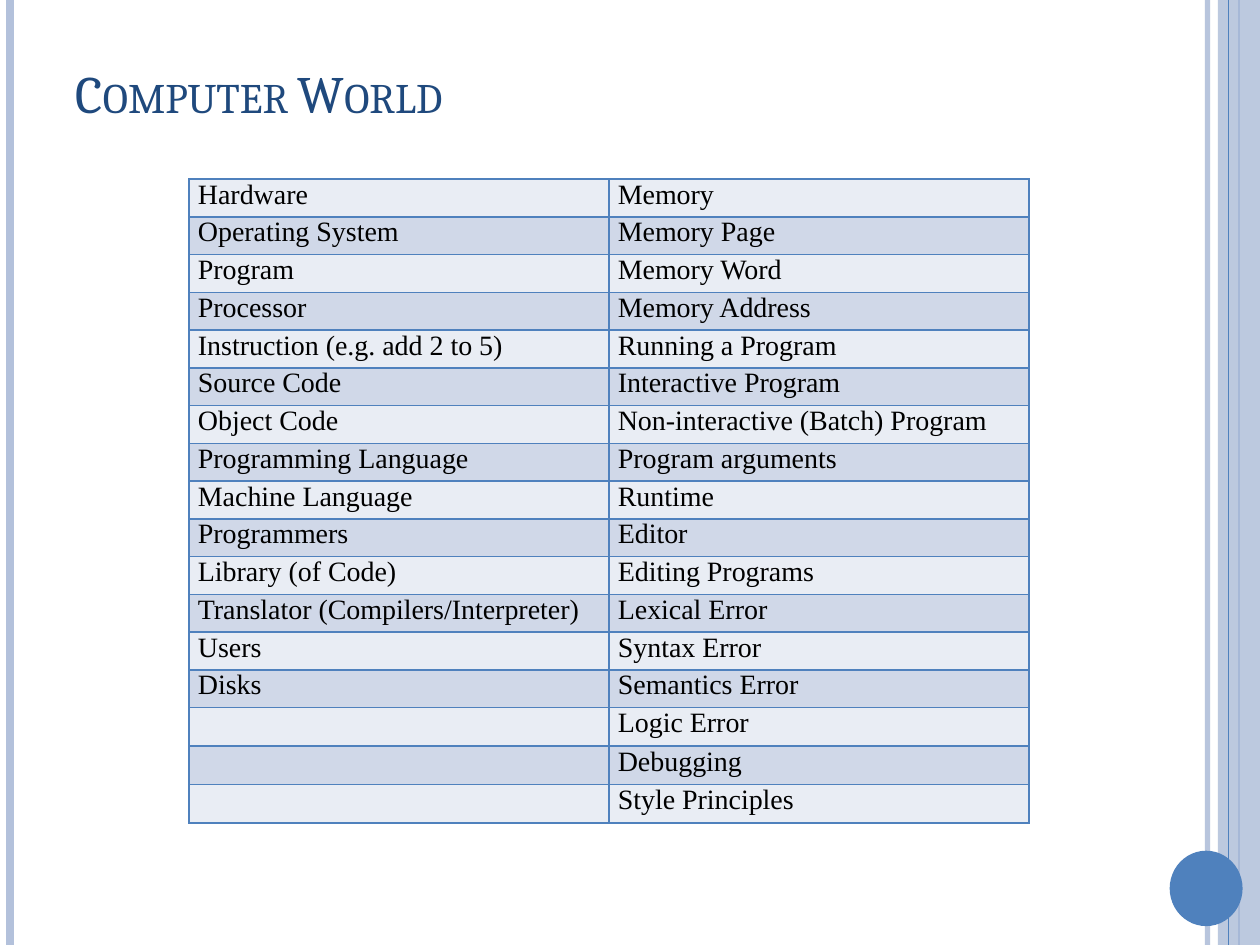
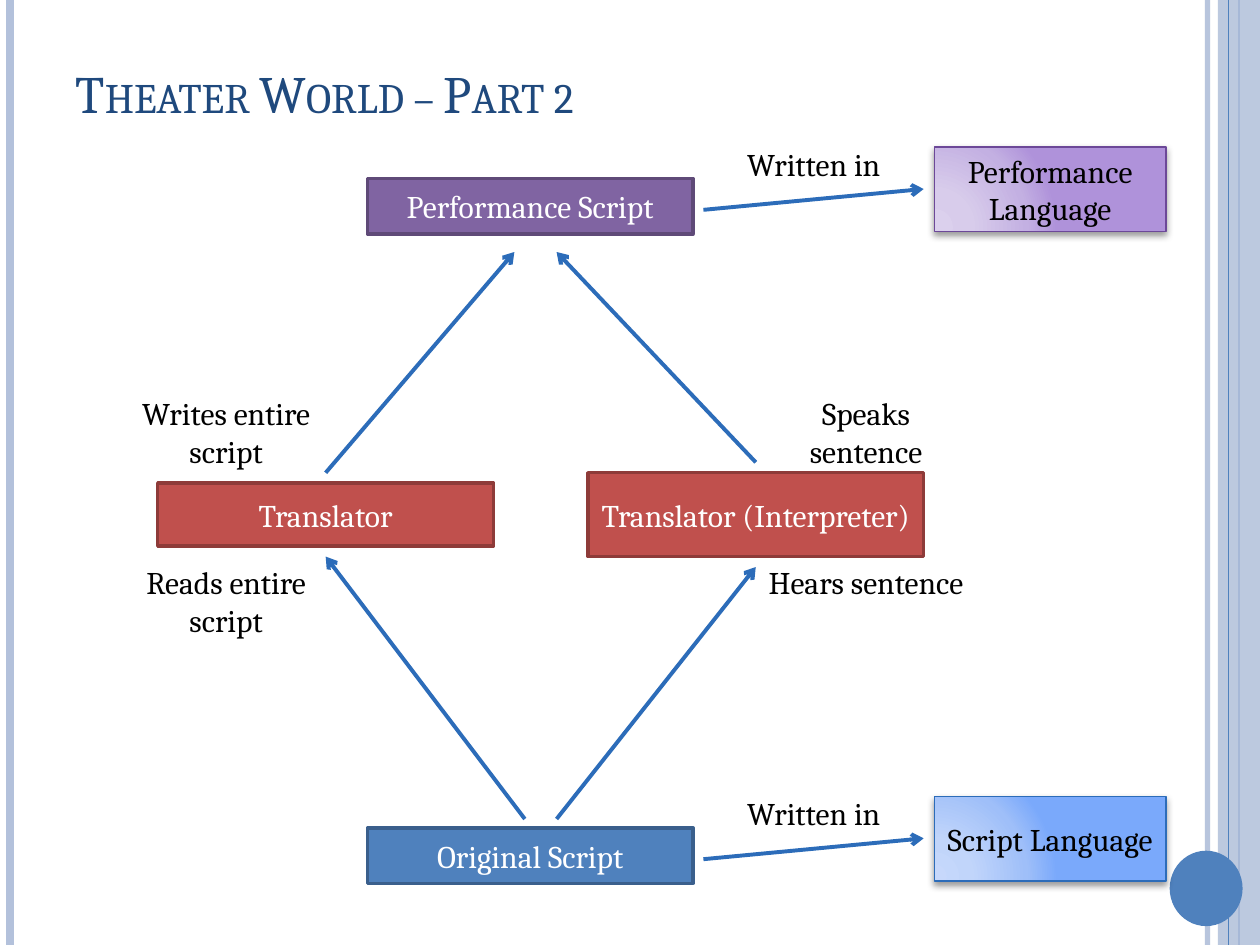
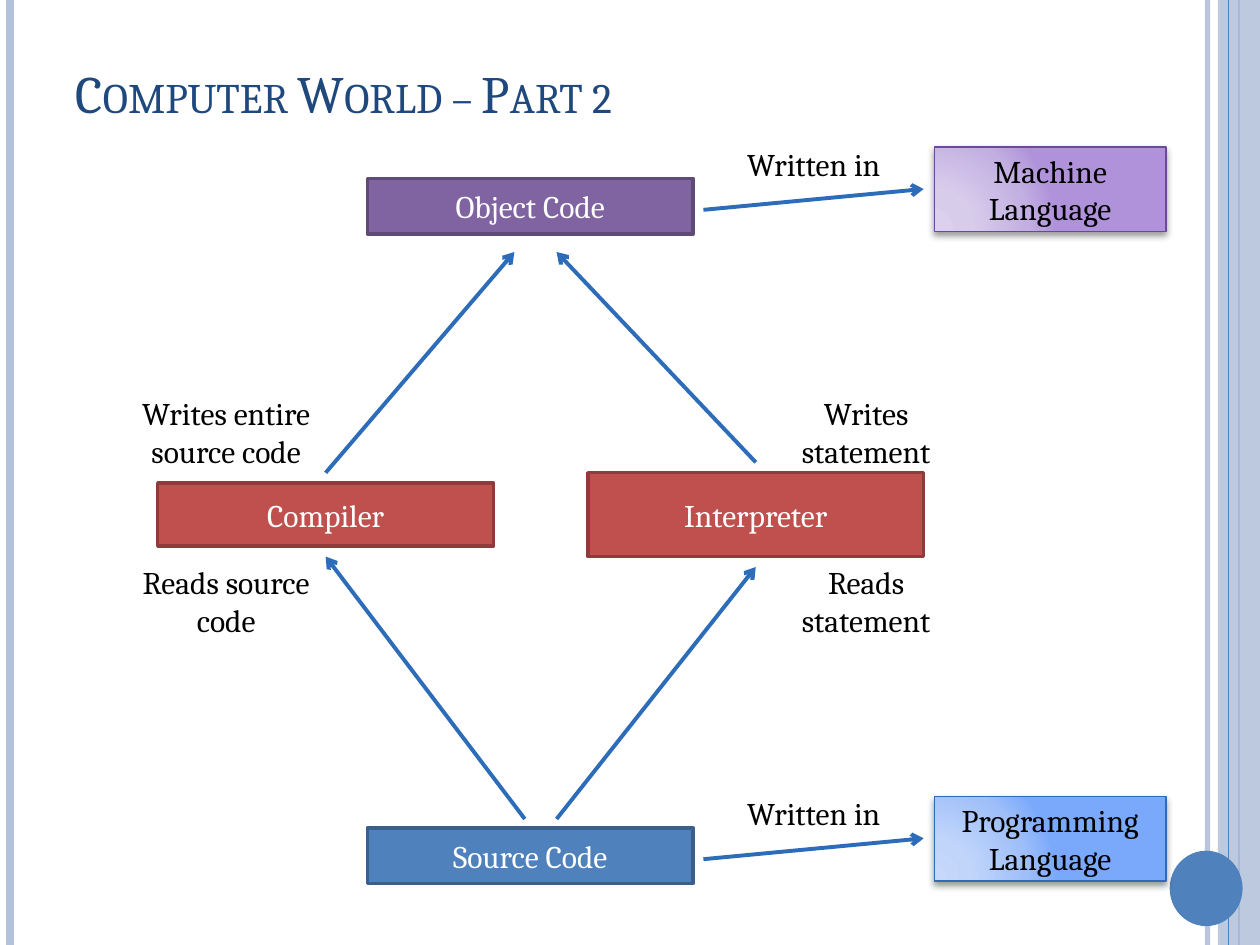
"""Builds three slides that compare a theater world with a computer world."""
from itertools import zip_longest

from pptx import Presentation, util as u
from pptx.dml.color import RGBColor
from pptx.enum import shapes as sh, text as tx
from pptx.oxml import parse_xml
from pptx.oxml.ns import nsdecls, qn

BLACK = RGBColor(0x00, 0x00, 0x00)
WHITE = RGBColor(0xFF, 0xFF, 0xFF)
NAVY = RGBColor(0x1F, 0x49, 0x7D)
BLUE = RGBColor(0x4F, 0x81, 0xBD)
STEEL = RGBColor(0x3A, 0x5F, 0x8C)
ROYAL = RGBColor(0x2C, 0x6C, 0xB9)
MIST = RGBColor(0xB3, 0xC1, 0xDB)
RED = RGBColor(0xC0, 0x50, 0x4D)
BRICK = RGBColor(0x8E, 0x3B, 0x39)
PLUM = RGBColor(0x80, 0x64, 0xA2)
GRAPE = RGBColor(0x5F, 0x4A, 0x78)
VIOLET = RGBColor(0x6C, 0x48, 0x98)
PALE = RGBColor(0xE9, 0xED, 0xF4)
DULL = RGBColor(0xD0, 0xD8, 0xE8)
LILAC = [RGBColor.from_string(c) for c in ("DBD0ED", "D8CCEB", "C3B0E2", "AF92DA")]
SKY = [RGBColor.from_string(c) for c in ("C7D8FB", "C1D5FA", "9FBFF9", "7AA9FB")]

WIDE, HIGH = 25.4, 19.05
GAP = 0.21
TIP, FOOT = 5.08, 16.51

LEFT = ["Hardware", "Operating System", "Program", "Processor",
        "Instruction (e.g. add 2 to 5)", "Source Code", "Object Code",
        "Programming Language", "Machine Language", "Programmers",
        "Library (of Code)", "Translator (Compilers/Interpreter)", "Users", "Disks"]
RIGHT = ["Memory", "Memory Page", "Memory Word", "Memory Address",
         "Running a Program", "Interactive Program",
         "Non-interactive (Batch) Program", "Program arguments", "Runtime",
         "Editor", "Editing Programs", "Lexical Error", "Syntax Error",
         "Semantics Error", "Logic Error", "Debugging", "Style Principles"]


def cms(*nums):
    """Turn numbers into centimetre lengths."""
    return [u.Cm(n) for n in nums]


def write(frame, words, size=18, font="Cambria", color=BLACK,
          align=tx.PP_ALIGN.CENTER, anchor=tx.MSO_ANCHOR.MIDDLE, caps=False):
    """Put formatted words into a text frame."""
    frame.word_wrap = True
    frame.vertical_anchor = anchor
    para = frame.paragraphs[0]
    para.alignment = align
    run = para.add_run()
    run.text = words
    run.font.size = u.Pt(size)
    run.font.name = font
    run.font.color.rgb = color
    if caps:
        run.font._element.set("cap", "small")


def fade(shape, part):
    """Make the first colour of a shape partly opaque."""
    color = shape.element.spPr.find(".//" + qn("a:srgbClr"))
    color.append(parse_xml(f'<a:alpha {nsdecls("a")} val="{part * 1000}"/>'))


def link(slide, start, end, color=ROYAL, width=2.25, arrow=True):
    """Draw a straight line, with an arrowhead at its end if wanted."""
    line = slide.shapes.add_connector(sh.MSO_CONNECTOR.STRAIGHT, *cms(*start, *end))
    line.line.color.rgb = color
    line.line.width = u.Pt(width)
    if arrow:
        line.line._get_or_add_ln().append(
            parse_xml(f'<a:tailEnd {nsdecls("a")} type="arrow"/>'))
    line.element.spPr.append(parse_xml(f'<a:effectLst {nsdecls("a")}/>'))
    return line


def block(slide, box, fill, edge=None, width=2, kind=sh.MSO_SHAPE.RECTANGLE):
    """Draw a flat shape in one colour."""
    shape = slide.shapes.add_shape(kind, *cms(*box))
    shape.shadow.inherit = False
    shape.fill.solid()
    shape.fill.fore_color.rgb = fill
    if edge is None:
        shape.line.fill.background()
    else:
        shape.line.color.rgb = edge
        shape.line.width = u.Pt(width)
    return shape


def pad(frame):
    """Set slim side margins."""
    frame.margin_left = frame.margin_right = u.Cm(0.2)


def card(slide, box, words, fill, edge):
    """Draw a box with white words."""
    frame = block(slide, box, fill, edge).text_frame
    pad(frame)
    write(frame, words, color=WHITE)


def glow(slide, box, words, tints, edge):
    """Draw a box with a radial gradient and a soft shadow."""
    shape = block(slide, box, tints[0], edge, 1)
    props = shape.element.spPr
    stops = "".join(f'<a:gs pos="{pos * 1000}"><a:srgbClr val="{tint}"/></a:gs>'
                    for pos, tint in zip((0, 30, 75, 100), tints))
    props.replace(props.find(qn("a:solidFill")), parse_xml(
        f'<a:gradFill {nsdecls("a")} rotWithShape="1"><a:gsLst>{stops}</a:gsLst>'
        '<a:path path="circle"><a:fillToRect l="5000" t="100000" r="120000"'
        ' b="10000"/></a:path></a:gradFill>'))
    props.find(qn("a:effectLst")).append(parse_xml(
        f'<a:outerShdw {nsdecls("a")} blurRad="{u.Pt(4)}" dist="{u.Pt(2)}"'
        ' dir="5400000" rotWithShape="0"><a:srgbClr val="000000">'
        '<a:alpha val="40000"/></a:srgbClr></a:outerShdw>'))
    pad(shape.text_frame)
    write(shape.text_frame, words)


def label(slide, box, words):
    """Add a centred caption."""
    frame = slide.shapes.add_textbox(*cms(*box)).text_frame
    pad(frame)
    write(frame, words, anchor=tx.MSO_ANCHOR.TOP)


def trim(slide):
    """Draw the side bands and the disc, then move them to the layout."""
    def rule(x, color, width):
        return link(slide, (x, 0), (x, HIGH), color, width, arrow=False)

    thin = rule(24.34, MIST, 3)
    fade(thin, 93)
    parts = [thin, rule(0.21, MIST, 4.5), rule(24.98, BLUE, 1.5)]
    band = block(slide, (24.55, 0, 0.85, HIGH), MIST)
    fade(band, 87)
    parts += [band, rule(24.76, BLUE, 0.75),
              block(slide, (23.58, 17.15, 1.47, 1.52), BLUE, kind=sh.MSO_SHAPE.OVAL)]
    lay = slide.slide_layout
    for spot in list(lay.placeholders):
        if spot.placeholder_format.idx:
            lay.shapes.element.remove(spot.element)
    for part in parts:
        lay.shapes.element.append(part.element)


def start(deck, words):
    """Add a slide with a formatted title."""
    slide = deck.slides.add_slide(deck.slide_layouts[5])
    head = slide.shapes.title
    head.left, head.top, head.width, head.height = cms(1.27, 0.76, 22.02, 2.21)
    write(head.text_frame, words, size=30, color=NAVY,
          align=tx.PP_ALIGN.LEFT, caps=True)
    return slide


def grid(slide, box, cols):
    """Fill a banded table with columns of terms."""
    rows = list(zip_longest(*cols, fillvalue=""))
    table = slide.shapes.add_table(len(rows), len(cols), *cms(*box)).table
    table.first_row = table.horz_banding = False
    for r, row in enumerate(rows):
        for c, words in enumerate(row):
            cell = table.cell(r, c)
            cell.margin_left = cell.margin_right = u.Cm(0.18)
            cell.margin_top = cell.margin_bottom = 0
            props = cell._tc.get_or_add_tcPr()
            for side in ("lnL", "lnR", "lnT", "lnB"):
                props.append(parse_xml(
                    f'<a:{side} {nsdecls("a")} w="{u.Pt(1)}"><a:solidFill>'
                    f'<a:srgbClr val="{BLUE}"/></a:solidFill></a:{side}>'))
            cell.fill.solid()
            cell.fill.fore_color.rgb = DULL if r % 2 else PALE
            if words:
                write(cell.text_frame, words, size=16, font="Times New Roman",
                      align=tx.PP_ALIGN.LEFT, anchor=tx.MSO_ANCHOR.TOP)


def tongue(slide, box, words, look):
    """Draw a script, the language it is written in, and their arrow."""
    x, y = box
    text, lang = words
    fill, edge, tints, rim = look
    card(slide, (x, y + 0.81, 6.56, 1.12), text, fill, edge)
    glow(slide, (x + 11.43, y + 0.18, 4.66, 1.7), lang, tints, rim)
    link(slide, (x + 6.77, y + 1.44), (x + 11.21, y + 1.02))
    label(slide, (x + 6.77, y, 4.45, 1.02), "Written in")


def route(slide, box, words, ends, shift):
    """Draw a translator with its arrows and the captions beside it."""
    x, y, w, h = box
    name, above, below = words
    tip, foot = ends
    mid, core = x + w / 2, y + h / 2
    card(slide, box, name, RED, BRICK)
    link(slide, (mid, y - GAP), (tip, TIP))
    link(slide, (foot, FOOT), (mid, y + h + GAP))
    for words, drop in ((above, -2.55), (below, 0.85)):
        label(slide, (mid + shift, core + drop, 4.45, 1.8), words)


def flow(slide, top, base, left, right):
    """Lay out the two routes from the base script up to the top one."""
    tongue(slide, (7.41, 2.79), top, (PLUM, GRAPE, LILAC, VIOLET))
    tongue(slide, (7.41, 15.88), base, (BLUE, STEEL, SKY, ROYAL))
    route(slide, (3.18, 9.74, 6.77, 1.27), left, (10.37, 10.58), -4.23)
    route(slide, (11.85, 9.53, 6.77, 1.69), right, (11.22, 11.22), 0)


def main():
    """Build and save the deck."""
    deck = Presentation()
    deck.slide_width, deck.slide_height = cms(WIDE, HIGH)
    terms = start(deck, "Computer World")
    trim(terms)
    grid(terms, (3.81, 3.61, 16.93, 12.95), (LEFT, RIGHT))
    flow(start(deck, "Theater World – Part 2"),
         ("Performance Script", "Performance Language"),
         ("Original Script", "Script Language"),
         ("Translator", "Writes entire script", "Reads entire script"),
         ("Translator (Interpreter)", "Speaks sentence", "Hears sentence"))
    flow(start(deck, "Computer World – Part 2"),
         ("Object Code", "Machine Language"),
         ("Source Code", "Programming Language"),
         ("Compiler", "Writes entire source code", "Reads source code"),
         ("Interpreter", "Writes statement", "Reads statement"))
    deck.save("out.pptx")


if __name__ == "__main__":
    main()
